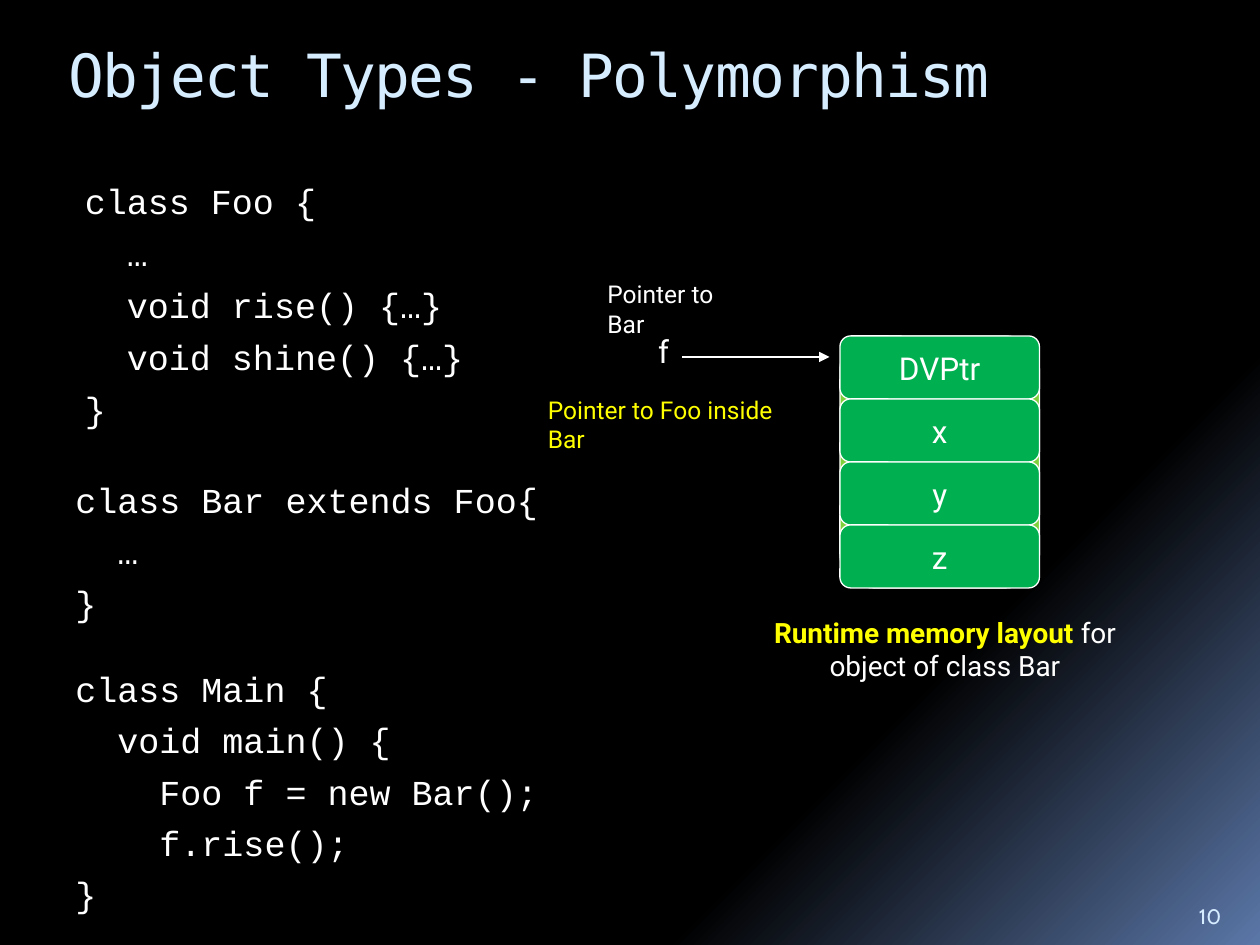
from lxml import etree
from pptx import Presentation
from pptx.dml.color import RGBColor
from pptx.enum.shapes import MSO_CONNECTOR, MSO_SHAPE
from pptx.enum.text import MSO_ANCHOR, PP_ALIGN
from pptx.oxml.ns import qn
from pptx.util import Pt

STRAIGHT = MSO_CONNECTOR.STRAIGHT
ROUNDED = MSO_SHAPE.ROUNDED_RECTANGLE
TOP, MIDDLE, BOTTOM = MSO_ANCHOR.TOP, MSO_ANCHOR.MIDDLE, MSO_ANCHOR.BOTTOM
LEFT, CENTER = PP_ALIGN.LEFT, PP_ALIGN.CENTER
WHITE, YELLOW, PALE_BLUE = "FFFFFF", "FFFF00", "D6ECFF"
GREEN, LIME = "00B050", "7FD13B"
TITLE_FONT, CODE_FONT, TEXT_FONT = "DejaVu Sans Mono", "Courier New", "Roboto"

FOO_CODE = ["class Foo {", "  …", "  void rise() {…}", "  void shine() {…}", "}"]
BAR_CODE = ["class Bar extends Foo{", "  …", "}"]
MAIN_CODE = ["class Main {", "  void main() {", "    Foo f = new Bar();",
             "    f.rise();", "}"]
FIELDS = ["DVPtr", "x", "y", "z"]
FIELD_LEFT, FIELD_TOP, FIELD_WIDTH, FIELD_HEIGHT = 480, 192, 114, 36


def rgb(color):
    return RGBColor.from_string(color)


def set_background(slide):
    fill = slide.background.fill
    fill.gradient()
    fill.gradient_angle = 315
    for stop, position, color in zip(fill.gradient_stops, (0.73, 1), ("000000", "5B77A8")):
        stop.position = position
        stop.color.rgb = rgb(color)


def style(p, size, color=WHITE, font=TEXT_FONT, align=LEFT):
    p.alignment = align
    p.font.size = Pt(size)
    p.font.name = font
    p.font.color.rgb = rgb(color)


def add_text(slide, box, lines, size, color=WHITE, font=TEXT_FONT,
             align=LEFT, anchor=TOP, wrap=True):
    tf = slide.shapes.add_textbox(*map(Pt, box)).text_frame
    tf.word_wrap = wrap
    tf.vertical_anchor = anchor
    tf.text = "\n".join(lines)
    for p in tf.paragraphs:
        style(p, size, color, font, align)
    return tf


def add_title(slide, text):
    tf = add_text(slide, (32, 18, 612, 66), [text], 34, PALE_BLUE, TITLE_FONT)
    for r in tf.paragraphs[0].runs:
        r.font._element.set("spc", "-100")


def add_code(slide, box, lines, margin=27, before=5.3, spacing=1.0):
    tf = add_text(slide, box, lines, 20, font=CODE_FONT)
    for p in tf.paragraphs:
        p.space_before = Pt(before)
        p.line_spacing = spacing
        pPr = p._p.get_or_add_pPr()
        pPr.set("marL", str(Pt(margin)))
        pPr.set("indent", str(Pt(-27)))


def add_block(slide, top, height, color, corner, text=""):
    s = slide.shapes.add_shape(ROUNDED, Pt(FIELD_LEFT), Pt(top), Pt(FIELD_WIDTH), Pt(height))
    s.adjustments[0] = corner
    s.shadow.inherit = False
    s.fill.solid()
    s.fill.fore_color.rgb = rgb(color)
    s.line.color.rgb = rgb(WHITE)
    s.line.width = Pt(0.75)
    if text:
        tf = s.text_frame
        tf.word_wrap = False
        tf.vertical_anchor = MIDDLE
        tf.text = text
        style(tf.paragraphs[0], 18, align=CENTER)


def add_object_layout(slide):
    add_block(slide, FIELD_TOP, FIELD_HEIGHT * len(FIELDS), LIME, 0.17)
    for i, field in enumerate(FIELDS):
        add_block(slide, FIELD_TOP + i * FIELD_HEIGHT, FIELD_HEIGHT, GREEN, 0.17, field)


def add_arrow(slide, x1, y1, x2, y2):
    s = slide.shapes.add_connector(STRAIGHT, Pt(x1), Pt(y1), Pt(x2), Pt(y2))
    s.line.color.rgb = rgb(WHITE)
    s.line.width = Pt(0.75)
    etree.SubElement(s.line._get_or_add_ln(), qn("a:tailEnd"), type="triangle")
    etree.SubElement(s._element.spPr, qn("a:effectLst"))


def add_caption(slide):
    tf = add_text(slide, (414, 348, 252, 46), ["Runtime memory layout "], 16, align=CENTER)
    p = tf.paragraphs[0]
    r = p.runs[0]
    r.font.bold = True
    r.font.color.rgb = rgb(YELLOW)
    r = p.add_run()
    r.text = "for object of class Bar"


def main():
    prs = Presentation()
    prs.slide_width, prs.slide_height = Pt(720), Pt(540)
    slide = prs.slides.add_slide(prs.slide_layouts[6])
    set_background(slide)
    add_title(slide, "Object Types - Polymorphism")
    add_code(slide, (36, 102, 342, 168), FOO_CODE, margin=32.4, before=8, spacing=0.9)
    add_code(slide, (36, 270, 360, 102), BAR_CODE)
    add_code(slide, (36, 378, 360, 144), MAIN_CODE)
    add_object_layout(slide)
    add_caption(slide)
    add_arrow(slide, 390, 204, 474, 204)
    add_text(slide, (369, 186, 22, 36), ["f"], 18, wrap=False)
    add_text(slide, (340, 156, 99, 24), ["Pointer to Bar"], 14, wrap=False)
    add_text(slide, (306, 222, 166, 24), ["Pointer to Foo inside Bar"], 14, YELLOW)
    add_text(slide, (678, 505, 36, 29), ["10"], 12, PALE_BLUE, "Cabin", anchor=BOTTOM)
    prs.save("out.pptx")


if __name__ == "__main__":
    main()
